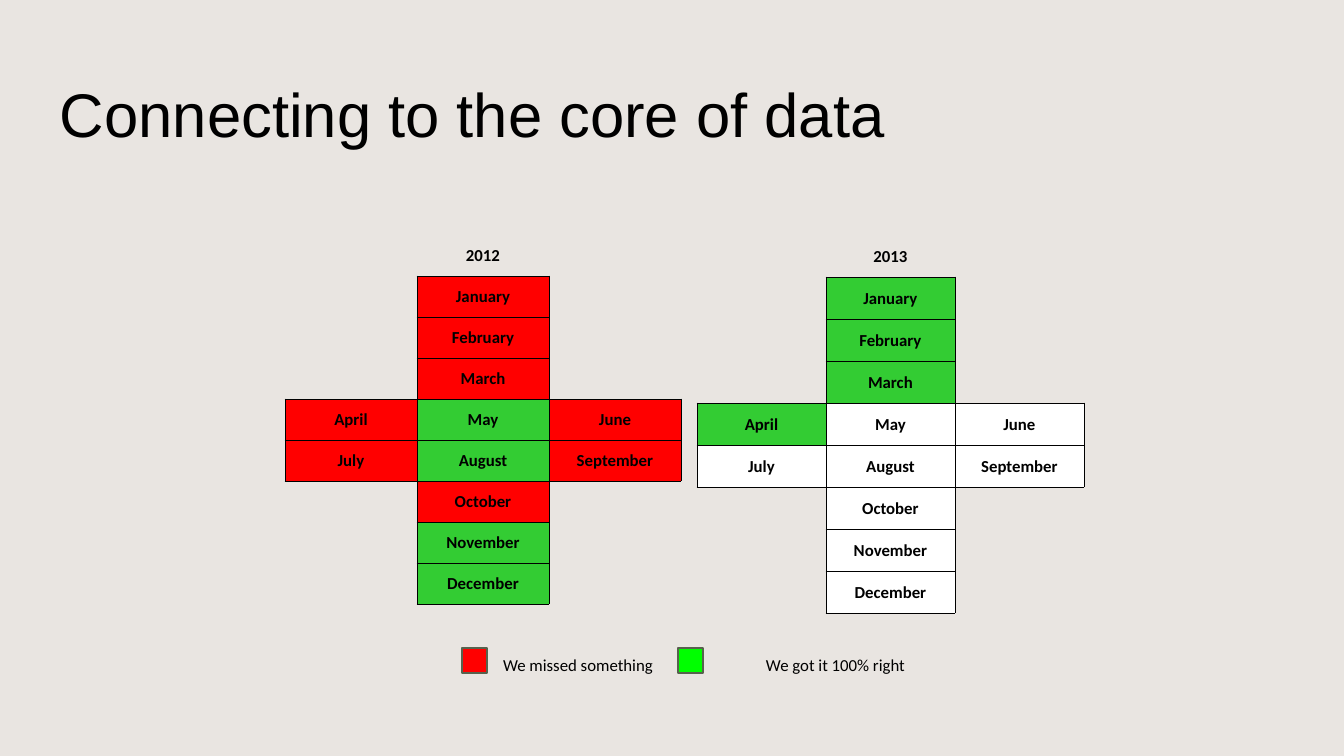
from dataclasses import dataclass
from lxml.etree import SubElement
from pptx import Presentation
from pptx.dml.color import RGBColor
from pptx.enum.shapes import MSO_SHAPE
from pptx.enum.text import MSO_ANCHOR, PP_ALIGN
from pptx.oxml.ns import qn
from pptx.util import Emu, Pt

EMU_PER_PX = 914400 / 100.8
NO_STYLE = "{2D5ABB26-0587-4C30-8999-92F81FD0307C}"

MONTH_ROWS = [
    ["", "January", ""],
    ["", "February", ""],
    ["", "March", ""],
    ["April", "May", "June"],
    ["July", "August", "September"],
    ["", "October", ""],
    ["", "November", ""],
    ["", "December", ""],
]


def px(length):
    return Emu(round(length * EMU_PER_PX))


@dataclass(frozen=True)
class Theme:
    background: str = "E9E5E1"
    text: str = "000000"
    missed: str = "FF0000"
    right: str = "33CC33"
    still_open: str = "FFFFFF"
    legend_right: str = "00FF00"
    swatch_line: str = "57624D"
    title_font: str = "Arial"
    body_font: str = "Calibri"
    title_size: int = 44
    body_size: int = 12
    grid_width: float = 0.5
    swatch_width: float = 1


class SlideBuilder:
    def __init__(self, slide, theme):
        self.slide = slide
        self.theme = theme
        fill = slide.background.fill
        fill.solid()
        fill.fore_color.rgb = RGBColor.from_string(theme.background)

    def style(self, paragraph, font_name, size, bold=False):
        font = paragraph.font
        font.name, font.size, font.bold = font_name, Pt(size), bold
        font.color.rgb = RGBColor.from_string(self.theme.text)

    def text(self, box, text, font_name, size, anchor, left_inset=None, tab=None):
        frame = self.slide.shapes.add_textbox(*map(px, box)).text_frame
        frame.word_wrap = True
        frame.vertical_anchor = anchor
        if left_inset is not None:
            frame.margin_left = px(left_inset)
        paragraph = frame.paragraphs[0]
        paragraph.text = text
        if tab is not None:
            tabs = SubElement(paragraph._p.get_or_add_pPr(), qn("a:tabLst"))
            SubElement(tabs, qn("a:tab"), pos=str(px(tab)), algn="l")
        self.style(paragraph, font_name, size)

    def swatch(self, left, top, size, color):
        shape = self.slide.shapes.add_shape(
            MSO_SHAPE.RECTANGLE, px(left), px(top), px(size), px(size))
        shape.shadow.inherit = False
        shape.fill.solid()
        shape.fill.fore_color.rgb = RGBColor.from_string(color)
        shape.line.color.rgb = RGBColor.from_string(self.theme.swatch_line)
        shape.line.width = Pt(self.theme.swatch_width)

    def edge(self, cell, side, visible):
        line = SubElement(cell._tc.get_or_add_tcPr(), qn(f"a:ln{side}"))
        if visible:
            line.set("w", str(Pt(self.theme.grid_width)))
            fill = SubElement(line, qn("a:solidFill"))
            SubElement(fill, qn("a:srgbClr"), val=self.theme.text)
        else:
            SubElement(line, qn("a:noFill"))

    def calendar(self, left, top, column_width, row_height, year, colors):
        """Draw a year as a cross of months, each filled from colors."""
        rows = [["", year, ""]] + MONTH_ROWS
        table = self.slide.shapes.add_table(
            len(rows), 3, px(left), px(top),
            px(3 * column_width), px(len(rows) * row_height)).table
        table.first_row = table.horz_banding = False
        table._tbl.tblPr.find(qn("a:tableStyleId")).text = NO_STYLE
        for column in table.columns:
            column.width = px(column_width)
        for row in table.rows:
            row.height = px(row_height)

        def is_month(row, column):
            return 0 < row < len(rows) and 0 <= column < 3 and rows[row][column] != ""

        for r, row in enumerate(rows):
            for c, label in enumerate(row):
                cell = table.cell(r, c)
                month = is_month(r, c)
                neighbours = {"L": (r, c - 1), "R": (r, c + 1),
                              "T": (r - 1, c), "B": (r + 1, c)}
                for side, neighbour in neighbours.items():
                    self.edge(cell, side, month or is_month(*neighbour))
                if month:
                    cell.fill.solid()
                    cell.fill.fore_color.rgb = RGBColor.from_string(colors[label])
                else:
                    cell.fill.background()
                cell.margin_left = cell.margin_right = cell.margin_top = px(1)
                cell.margin_bottom = 0
                cell.vertical_anchor = MSO_ANCHOR.MIDDLE
                paragraph = cell.text_frame.paragraphs[0]
                paragraph.text = label
                paragraph.alignment = PP_ALIGN.CENTER
                self.style(paragraph, self.theme.body_font, self.theme.body_size, True)


def main():
    theme = Theme()
    presentation = Presentation()
    presentation.slide_width, presentation.slide_height = px(1344), px(756)
    slide = presentation.slides.add_slide(presentation.slide_layouts[6])
    builder = SlideBuilder(slide, theme)

    # Title
    builder.text((50, 40, 1202, 146), "Connecting to the core of data",
                 theme.title_font, theme.title_size, MSO_ANCHOR.MIDDLE)

    # Month results for each year
    months = [label for row in MONTH_ROWS for label in row if label]
    right_2012 = {"May", "August", "November", "December"}
    colors_2012 = {month: theme.right if month in right_2012 else theme.missed
                   for month in months}
    colors_2013 = {month: theme.right if number < 4 else theme.still_open
                   for number, month in enumerate(months)}
    builder.calendar(285, 235, 132, 41, "2012", colors_2012)
    builder.calendar(697, 235, 129, 42, "2013", colors_2013)

    # Legend
    builder.text((454, 640, 533, 40), "We missed something\tWe got it 100% right",
                 theme.body_font, theme.body_size, MSO_ANCHOR.BOTTOM,
                 left_inset=49, tab=263)
    builder.swatch(462, 648, 25, theme.missed)
    builder.swatch(678, 648, 25, theme.legend_right)

    presentation.save("out.pptx")


if __name__ == "__main__":
    main()
